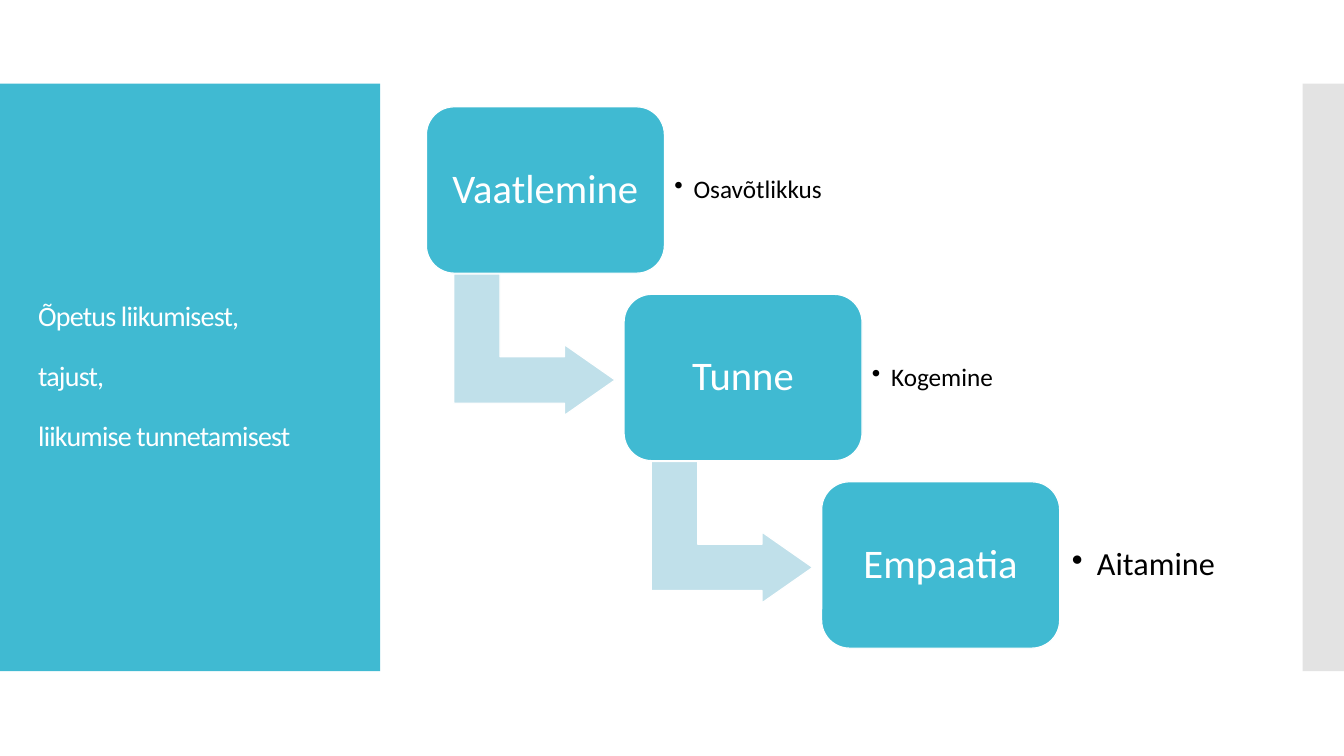
from lxml import etree
from pptx import Presentation, util as u
from pptx.dml.color import RGBColor
from pptx.enum import shapes, text
from pptx.oxml.ns import qn

TEAL, PALE, GREY, WHITE, BLACK = "40BAD2", "C0E0EA", "C8C8C8", "FFFFFF", "000000"
MS = shapes.MSO_SHAPE
STEP_X, STEP_Y = 1.96, 1.86
CARD_W, CARD_H = 2.36, 1.65
STEPS = [  # label, detail, detail size, bullet indent, inset
    ("Vaatlemine", "Osavõtlikkus", 18, 0.19, 0.1),
    ("Tunne", "Kogemine", 18, 0.19, 0.1),
    ("Empaatia", "Aitamine", 23, 0.25, 0.12),
]


def rgb(color):
    return RGBColor.from_string(color)


def add_block(s, kind, box, fill, line=None, adj=(), rotation=0):
    sp = s.shapes.add_shape(kind, *map(u.Inches, box))
    sp.shadow.inherit = False
    sp.rotation = rotation
    sp.fill.solid()
    sp.fill.fore_color.rgb = rgb(fill)
    if line:
        sp.line.color.rgb = rgb(line)
        sp.line.width = u.Pt(0.85)
    else:
        sp.line.fill.background()
    for i, value in enumerate(adj):
        sp.adjustments[i] = value
    return sp


def set_alpha(sp, percent):
    color = sp._element.spPr.find(qn("a:solidFill"))[0]
    etree.SubElement(color, qn("a:alpha"), val=str(percent * 1000))


def add_bullet(p, indent):
    pPr = p._p.get_or_add_pPr()
    pPr.set("marL", str(u.Inches(indent)))
    pPr.set("indent", str(-u.Inches(indent)))
    etree.SubElement(pPr, qn("a:buChar"), char="•")


def write(sp, lines, size, color, align=text.PP_ALIGN.LEFT, inset=0.1,
          gap=0, spacing=0, indent=0):
    """Fill sp with one paragraph per line; gap and spacing are in points."""
    tf = sp.text_frame
    tf.word_wrap = True
    tf.vertical_anchor = text.MSO_ANCHOR.MIDDLE
    tf.margin_left = tf.margin_right = u.Inches(inset)
    tf.margin_top = tf.margin_bottom = u.Inches(inset)
    for i, line in enumerate(lines):
        p = tf.add_paragraph() if i else tf.paragraphs[0]
        p.alignment = align
        p.line_spacing = 0.9
        p.space_before = u.Pt(gap if i else 0)
        if indent:
            add_bullet(p, indent)
        r = p.add_run()
        r.text = line
        r.font.name = "Calibri"
        r.font.size = u.Pt(size)
        r.font.color.rgb = rgb(color)
        if spacing:
            r._r.get_or_add_rPr().set("spc", str(round(spacing * 100)))


def add_text(s, box, lines, size, color, **fmt):
    write(s.shapes.add_textbox(*map(u.Inches, box)), lines, size, color, **fmt)


def add_step(s, i, label, detail, size, indent, inset):
    x, y = 4.23 + i * STEP_X, 1.06 + i * STEP_Y
    if i < len(STEPS) - 1:
        add_block(s, MS.BENT_UP_ARROW, (x + 0.37, y + 1.56, 1.4, 1.6), PALE,
                  WHITE, adj=(0.328, 0.25, 0.358), rotation=90)
    card = add_block(s, MS.ROUNDED_RECTANGLE, (x, y, CARD_W, CARD_H), TEAL,
                     WHITE, adj=(0.167,))
    write(card, [label], 29, WHITE, align=text.PP_ALIGN.CENTER, inset=0.12)
    add_text(s, (x + CARD_W, y + 0.16, 1.72, 1.34), [detail], size, BLACK,
             indent=indent, inset=inset)


def main():
    prs = Presentation()
    prs.slide_width, prs.slide_height = u.Inches(13.33), u.Inches(7.5)
    s = prs.slides.add_slide(prs.slide_layouts[6])
    add_block(s, MS.RECTANGLE, (0, 0.83, 3.77, 5.83), TEAL)
    edge = add_block(s, MS.RECTANGLE, (12.92, 0.83, 0.41, 5.83), GREY)
    set_alpha(edge, 50)
    add_text(s, (0.28, 1.23, 3.22, 5.03),
             ["Õpetus liikumisest,", "tajust,", "liikumise tunnetamisest"],
             20, WHITE, gap=21.5, spacing=-0.6)
    for i, step in enumerate(STEPS):
        add_step(s, i, *step)
    prs.save("out.pptx")


if __name__ == "__main__":
    main()
